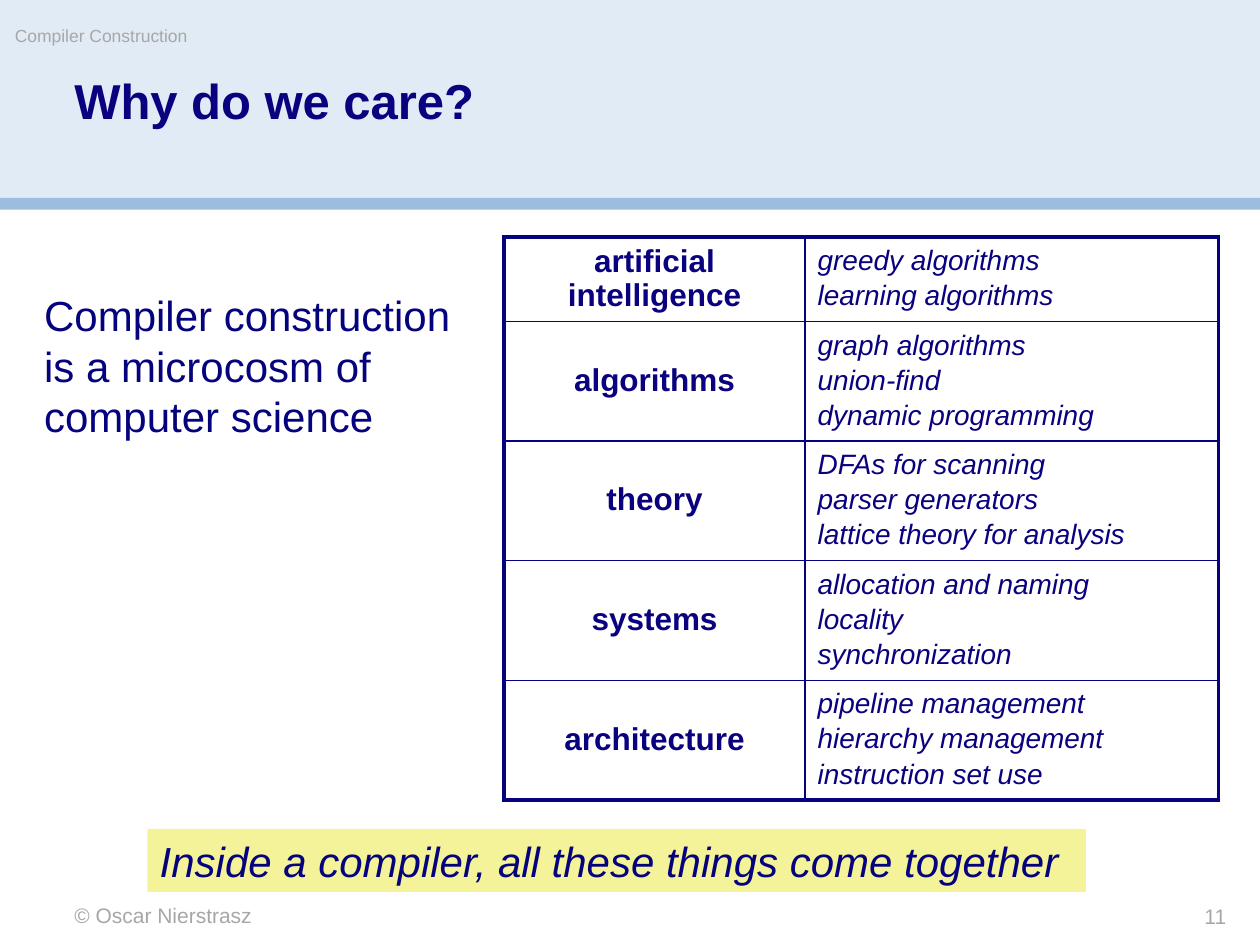
from lxml.etree import SubElement
from pptx import Presentation
from pptx.dml.color import RGBColor
from pptx.enum.shapes import MSO_SHAPE as Shape
from pptx.enum.text import MSO_ANCHOR as Anchor, MSO_AUTO_SIZE as AutoSize, PP_ALIGN as Align
from pptx.oxml import parse_xml
from pptx.oxml.ns import nsdecls, qn
from pptx.util import Cm, Pt

NAVY = RGBColor(0x05, 0x02, 0x7D)
INDIGO = RGBColor(0x0A, 0x01, 0x7F)
GREY = RGBColor(0xA7, 0xA7, 0xA7)
PALE_BLUE = RGBColor(0xE1, 0xEB, 0xF5)
MID_BLUE = RGBColor(0x9C, 0xBD, 0xDE)
YELLOW = RGBColor(0xF5, 0xF3, 0x99)

TOPICS = [
    ("artificial intelligence", ["greedy algorithms", "learning algorithms"]),
    ("algorithms", ["graph algorithms", "union-find", "dynamic programming"]),
    ("theory", ["DFAs for scanning", "parser generators", "lattice theory for analysis"]),
    ("systems", ["allocation and naming", "locality", "synchronization"]),
    ("architecture", ["pipeline management", "hierarchy management", "instruction set use"]),
]


def set_font(p, size, color, bold=False, italic=False):
    """Set the font of a whole paragraph."""
    p.font.name = "Arial"
    p.font.size = Pt(size)
    p.font.bold = bold
    p.font.italic = italic
    p.font.color.rgb = color


def add_rect(slide, box, color):
    """Add a plain filled rectangle."""
    sp = slide.shapes.add_shape(Shape.RECTANGLE, *map(Cm, box))
    sp.shadow.inherit = False
    sp.fill.solid()
    sp.fill.fore_color.rgb = color
    sp.line.fill.background()
    return sp


def write(sp, text, size, color, align=Align.LEFT, wrap=True, **style):
    """Write one top-anchored paragraph into a shape."""
    tf = sp.text_frame
    tf.word_wrap = wrap
    tf.vertical_anchor = Anchor.TOP
    p = tf.paragraphs[0]
    p.text = text
    p.alignment = align
    set_font(p, size, color, **style)
    return p


def add_label(slide, box, text, size, color, margin=0, **style):
    """Add a text box with equal margins, or default ones for None."""
    sp = slide.shapes.add_textbox(*map(Cm, box))
    if margin is not None:
        tf = sp.text_frame
        tf.margin_left = tf.margin_right = tf.margin_top = tf.margin_bottom = Cm(margin)
    return write(sp, text, size, color, **style)


def set_borders(cell, widths):
    """Draw the left, right, top and bottom borders of a cell."""
    tcPr = cell._tc.get_or_add_tcPr()
    for i, (side, width) in enumerate(zip("LRTB", widths)):
        tcPr.insert(i, parse_xml(
            f'<a:ln{side} {nsdecls("a")} w="{Pt(width)}"><a:solidFill>'
            f'<a:srgbClr val="{NAVY}"/></a:solidFill></a:ln{side}>'))


def fill_cell(cell, lines, size, align, **style):
    """Fill a table cell with one paragraph per line."""
    cell.fill.background()
    cell.vertical_anchor = Anchor.MIDDLE
    cell.text = "\n".join(lines)
    for p in cell.text_frame.paragraphs:
        p.alignment = align
        p.line_spacing = 0.95
        before = SubElement(p._p.get_or_add_pPr(), qn("a:spcBef"))
        SubElement(before, qn("a:spcPct")).set("val", "20000")
        set_font(p, size, INDIGO, **style)


def add_topic_table(slide):
    """Add the table of fields and their topics."""
    frame = slide.shapes.add_table(len(TOPICS), 2, Cm(10.16), Cm(4.78), Cm(14.4), Cm(8.76))
    table = frame.table
    table.first_row = table.horz_banding = False
    table.columns[0].width = Cm(6.07)
    table.columns[1].width = Cm(8.33)
    last = len(TOPICS) - 1
    for i, (field, topics) in enumerate(TOPICS):
        table.rows[i].height = Cm(1.88 if i else 1.24)
        fill_cell(table.cell(i, 0), [field], 18, Align.CENTER, bold=True)
        fill_cell(table.cell(i, 1), topics, 16, Align.LEFT, italic=True)
        for j in range(2):
            outer = (j == 0, j == 1, i == 0, i == last)
            set_borders(table.cell(i, j), [2.25 if edge else 1 for edge in outer])


def main():
    """Build the slide and save it."""
    prs = Presentation()
    prs.slide_width, prs.slide_height = Cm(25.4), Cm(19.05)
    slide = prs.slides.add_slide(prs.slide_layouts[6])

    add_rect(slide, (0, 0, 25.4, 4.01), PALE_BLUE)
    add_rect(slide, (0, 3.99, 25.4, 0.24), MID_BLUE)
    add_label(slide, (1.5, 18.19, 10.59, 0.51), "© Oscar Nierstrasz", 12, GREY)
    add_label(slide, (0.3, 0.51, 14.99, 0.71), "Compiler Construction", 10, GREY)
    title = add_label(slide, (1.5, 1.55, 22.43, 2.26), "Why do we care?", 28, INDIGO, bold=True)
    title.line_spacing = 0.9

    add_topic_table(slide)
    add_label(slide, (0.64, 5.72, 9.09, 3.3),
              "Compiler construction is a microcosm of computer science", 24, NAVY, margin=None)
    banner = add_rect(slide, (2.97, 16.71, 18.92, 1.27), YELLOW)
    write(banner, "Inside a compiler, all these things come together", 24, NAVY,
          wrap=True, italic=True)
    banner.text_frame.auto_size = AutoSize.NONE
    add_label(slide, (20.96, 18.21, 3.76, 0.51), "11", 12, GREY, align=Align.RIGHT)

    prs.save("out.pptx")


if __name__ == "__main__":
    main()
